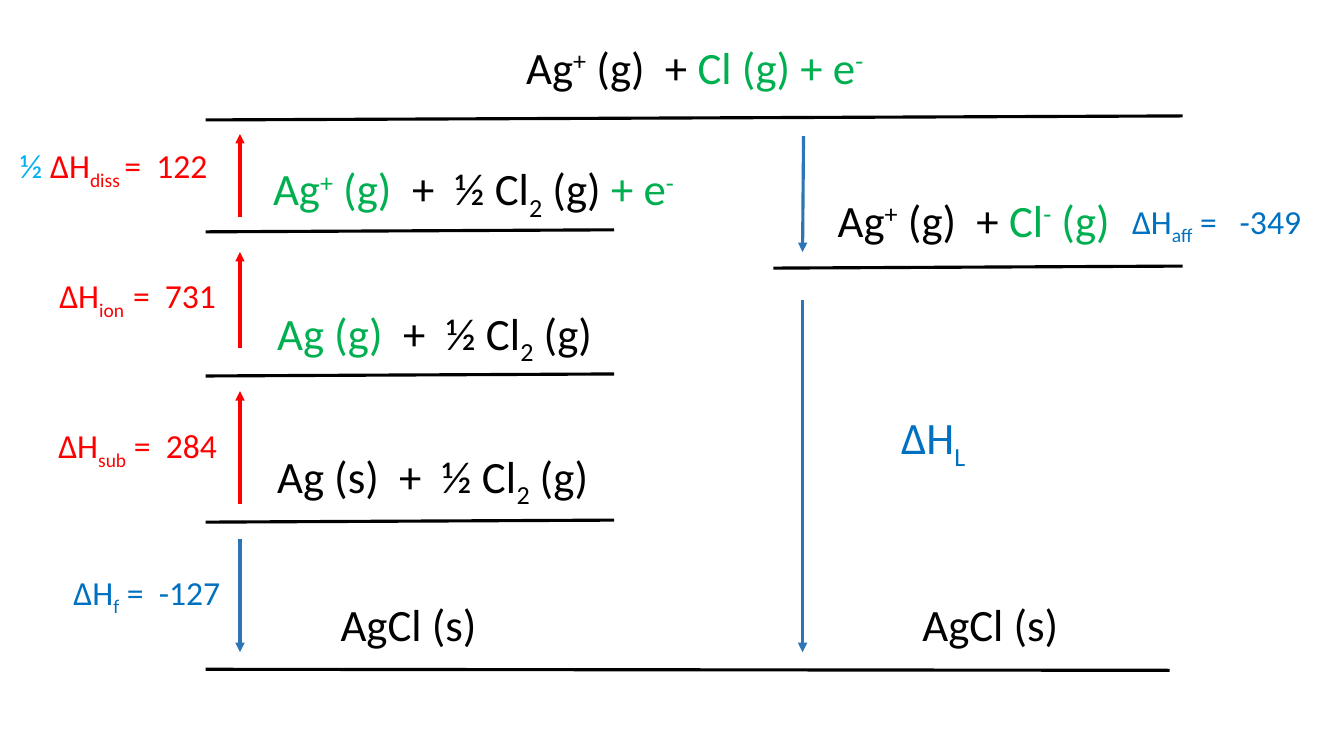
from lxml.etree import SubElement
from pptx import Presentation
from pptx.dml.color import RGBColor
from pptx.enum.shapes import MSO_CONNECTOR
from pptx.enum.text import MSO_AUTO_SIZE
from pptx.oxml.ns import qn
from pptx.util import Inches, Pt

COLORS = {
    "black": "000000",
    "green": "00B050",
    "red": "FF0000",
    "blue": "0070C0",
    "sky": "00B0F0",
    "arrow": "2E75B6",
}
SUB, SUP = -25, 30


class EnergyDiagram:
    font = "Calibri"
    line_width = 2.25
    heights = {32: 0.64, 24: 0.5}

    def __init__(self, slide):
        self.s = slide

    def color(self, name):
        return RGBColor.from_string(COLORS[name])

    def line(self, x1, y1, x2, y2, color="black"):
        c = self.s.shapes.add_connector(
            MSO_CONNECTOR.STRAIGHT, Inches(x1), Inches(y1), Inches(x2), Inches(y2)
        )
        c.line.color.rgb = self.color(color)
        c.line.width = Pt(self.line_width)
        SubElement(c._element.spPr, qn("a:effectLst"))
        return c

    def arrow(self, x1, y1, x2, y2, color):
        c = self.line(x1, y1, x2, y2, color)
        SubElement(c.line._get_or_add_ln(), qn("a:tailEnd"), type="triangle")

    def label(self, left, top, width, size, runs):
        sp = self.s.shapes.add_textbox(
            Inches(left), Inches(top), Inches(width), Inches(self.heights[size])
        )
        tf = sp.text_frame
        tf.word_wrap = False
        tf.auto_size = MSO_AUTO_SIZE.SHAPE_TO_FIT_TEXT
        p = tf.paragraphs[0]
        for text, color, shift in runs:
            r = p.add_run()
            r.text = text
            r.font.name = self.font
            r.font.size = Pt(size)
            r.font.color.rgb = self.color(color)
            if shift:
                r._r.get_or_add_rPr().set("baseline", f"{shift * 1000}")

    def species(self, left, top, width, *runs):
        self.label(left, top, width, 32, runs)

    def enthalpy(self, left, top, width, color, kind, value, size=24, prefix=()):
        symbol = " ∆H" if prefix else "∆H"
        runs = [*prefix, (symbol, color, 0), (kind, color, SUB)]
        if value:
            runs.append((value, color, 0))
        self.label(left, top, width, size, runs)


def ion(color, tail):
    return [("Ag", color, 0), ("+", color, SUP), (tail, color, 0)]


def half_chlorine(lead, tail=" (g)"):
    return [(lead, "black", 0), ("2", "black", SUB), (tail, "black", 0)]


def main():
    prs = Presentation()
    prs.slide_width, prs.slide_height = Inches(13.33), Inches(7.5)
    d = EnergyDiagram(prs.slides.add_slide(prs.slide_layouts[6]))

    left_x, right_x = 2.04, 11.73
    d.line(left_x, 6.64, 11.6, 6.65)
    for y in (5.18, 3.73, 2.3):
        d.line(left_x, y, 6.09, y - 0.02)
    d.line(left_x, 1.19, right_x, 1.15)
    d.line(7.67, 2.66, right_x, 2.64)

    step_x, lattice_x = 2.38, 7.96
    d.arrow(step_x, 5.35, step_x, 6.47, "arrow")
    for start, end in ((5, 3.88), (3.45, 2.5), (2.15, 1.33)):
        d.arrow(step_x, start, step_x, end, "red")
    d.arrow(7.97, 1.35, lattice_x, 2.5, "arrow")
    d.arrow(lattice_x, 2.98, lattice_x, 6.47, "arrow")

    electron = [("-", "green", SUP)]
    for x in (3.28, 9.05):
        d.species(x, 5.87, 1.57, ("AgCl (s)", "black", 0))
    d.species(2.65, 4.4, 3.45, *half_chlorine("Ag (s)  +  ½ Cl"))
    d.species(2.65, 2.98, 3.48, ("Ag (g)  ", "green", 0), *half_chlorine("+  ½ Cl"))
    d.species(2.61, 1.55, 4.38, *ion("green", " (g)  "),
              *half_chlorine("+  ½ Cl", " (g) "), ("+ e", "green", 0), *electron)
    d.species(5.12, 0.34, 3.72, *ion("black", " (g)  + "),
              ("Cl (g) + e", "green", 0), *electron)
    d.species(8.21, 1.86, 3.07, *ion("black", " (g)  + "),
              ("Cl", "green", 0), *electron, (" (g)", "green", 0))

    d.enthalpy(0.63, 5.62, 1.75, "blue", "f", " =  -127")
    d.enthalpy(0.48, 4.17, 1.9, "red", "sub", " =  284")
    d.enthalpy(0.49, 2.68, 1.9, "red", "ion  ", "=  731")
    d.enthalpy(0.1, 1.39, 2.2, "red", "diss ", "=  122", prefix=[("½", "sky", 0)])
    d.enthalpy(11.13, 1.94, 2, "blue", "aff", " =   -349")
    d.enthalpy(8.84, 4.02, 0.86, "blue", "L", "", size=32)

    prs.save("out.pptx")


if __name__ == "__main__":
    main()
